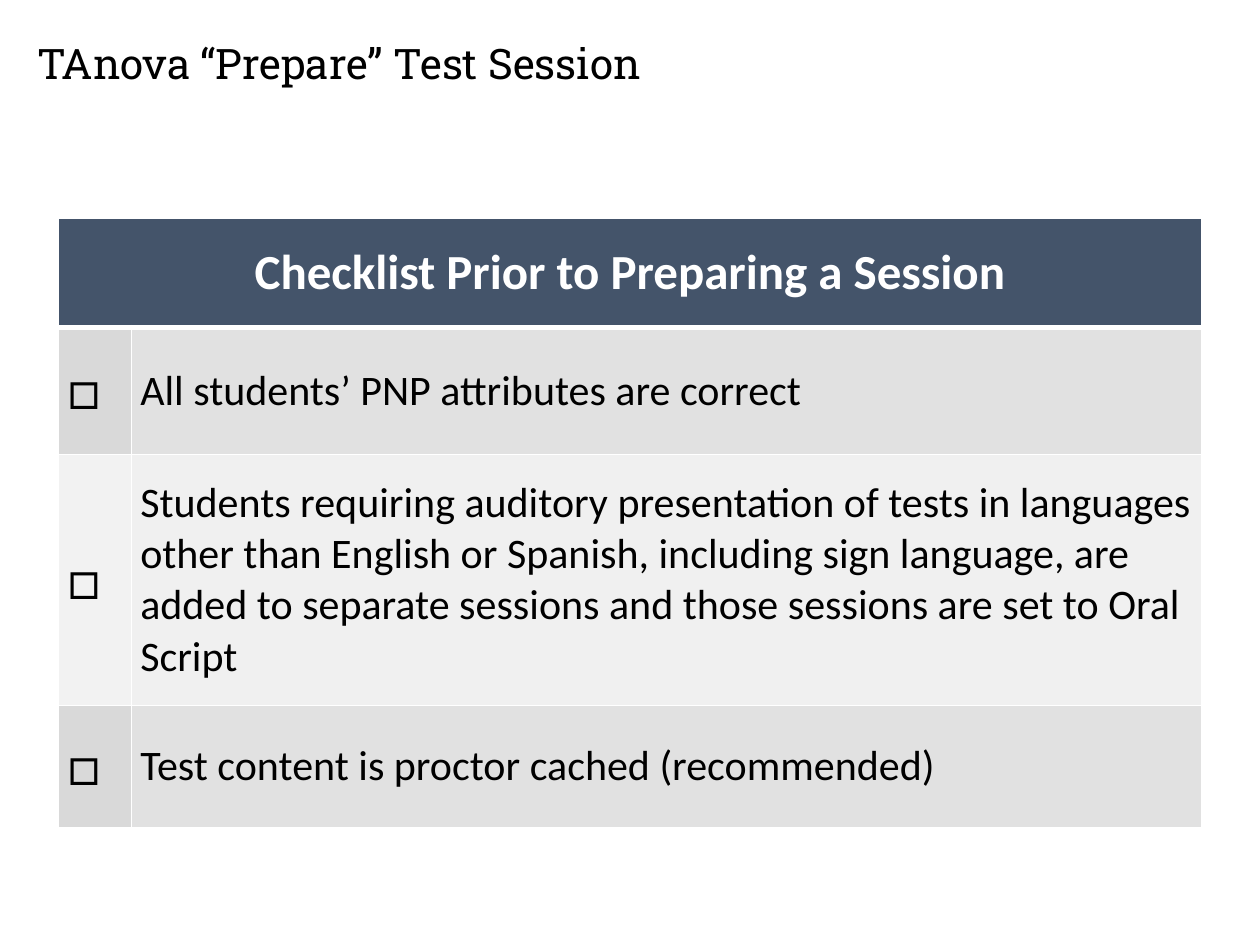
from lxml import etree
from pptx import Presentation
from pptx.dml.color import RGBColor
from pptx.enum import text
from pptx.oxml import ns
from pptx.util import Pt

WHITE, BLACK, NAVY = "FFFFFF", "000000", "44546A"
# Fills of the box column and the item column, alternating by row
BANDS = [("D9D9D9", "E1E1E1"), ("F2F2F2", "F0F0F0")]


def colour(value):
    return RGBColor.from_string(value)


class ChecklistSlide:
    title_font = "Roboto Slab"
    body_font = "Calibri"

    def __init__(self, prs):
        self.slide = prs.slides.add_slide(prs.slide_layouts[6])

    def set_words(self, paragraph, words, size, font, ink=BLACK, bold=False):
        paragraph.text = words
        paragraph.font.size = Pt(size)
        paragraph.font.name = font
        paragraph.font.bold = bold
        paragraph.font.color.rgb = colour(ink)

    def title(self, words, left, top, width, height):
        frame = self.slide.shapes.add_textbox(
            Pt(left), Pt(top), Pt(width), Pt(height)).text_frame
        frame.word_wrap = True
        frame.margin_left = frame.margin_right = 0
        frame.margin_top = frame.margin_bottom = 0
        self.set_words(frame.paragraphs[0], words, 24, self.title_font)

    def borders(self, cell, top=1, bottom=1):
        properties = cell._tc.get_or_add_tcPr()
        widths = {"a:lnL": 1, "a:lnR": 1, "a:lnT": top, "a:lnB": bottom}
        for side, width in widths.items():
            line = etree.SubElement(properties, ns.qn(side), w=str(Pt(width)))
            fill = etree.SubElement(line, ns.qn("a:solidFill"))
            etree.SubElement(fill, ns.qn("a:srgbClr"), val=WHITE)

    def cell(self, cell, words, size, fill, ink=BLACK, bold=False, **edges):
        self.borders(cell, **edges)
        cell.fill.solid()
        cell.fill.fore_color.rgb = colour(fill)
        cell.vertical_anchor = text.MSO_ANCHOR.MIDDLE
        cell.margin_left = cell.margin_right = Pt(5)
        cell.margin_top = cell.margin_bottom = 0
        self.set_words(cell.text_frame.paragraphs[0], words, size,
                       self.body_font, ink, bold)

    def checklist(self, heading, items, left, top, columns, rows):
        table = self.slide.shapes.add_table(
            len(rows), len(columns), Pt(left), Pt(top),
            Pt(sum(columns)), Pt(sum(rows))).table
        for column, width in zip(table.columns, columns):
            column.width = Pt(width)
        for row, height in zip(table.rows, rows):
            row.height = Pt(height)

        # Heading across both columns
        header, spanned = table.cell(0, 0), table.cell(0, 1)
        header.merge(spanned)
        self.cell(header, heading, 28, NAVY, WHITE, True, bottom=3)
        self.borders(spanned, bottom=3)
        header.text_frame.paragraphs[0].alignment = text.PP_ALIGN.CENTER

        # One row per item, with its tick box
        for number, item in enumerate(items, 1):
            box_fill, item_fill = BANDS[(number - 1) % 2]
            top_edge = 3 if number == 1 else 1
            self.cell(table.cell(number, 0), "□", 32, box_fill, top=top_edge)
            self.cell(table.cell(number, 1), item, 24, item_fill, top=top_edge)


def main():
    prs = Presentation()
    prs.slide_width, prs.slide_height = Pt(720), Pt(540)
    page = ChecklistSlide(prs)

    # Title
    page.title("TAnova “Prepare” Test Session", 21.6, 21.6, 620.6, 56.2)

    # Checklist
    page.checklist(
        "Checklist Prior to Preparing a Session",
        [
            "All students’ PNP attributes are correct",
            "Students requiring auditory presentation of tests in languages "
            "other than English or Spanish, including sign language, are "
            "added to separate sessions and those sessions are set to Oral "
            "Script",
            "Test content is proctor cached (recommended)",
        ],
        left=33.4, top=124.6,
        columns=[41.8, 611.3], rows=[62.4, 72.7, 143.5, 69.6])

    prs.save("out.pptx")


if __name__ == "__main__":
    main()
